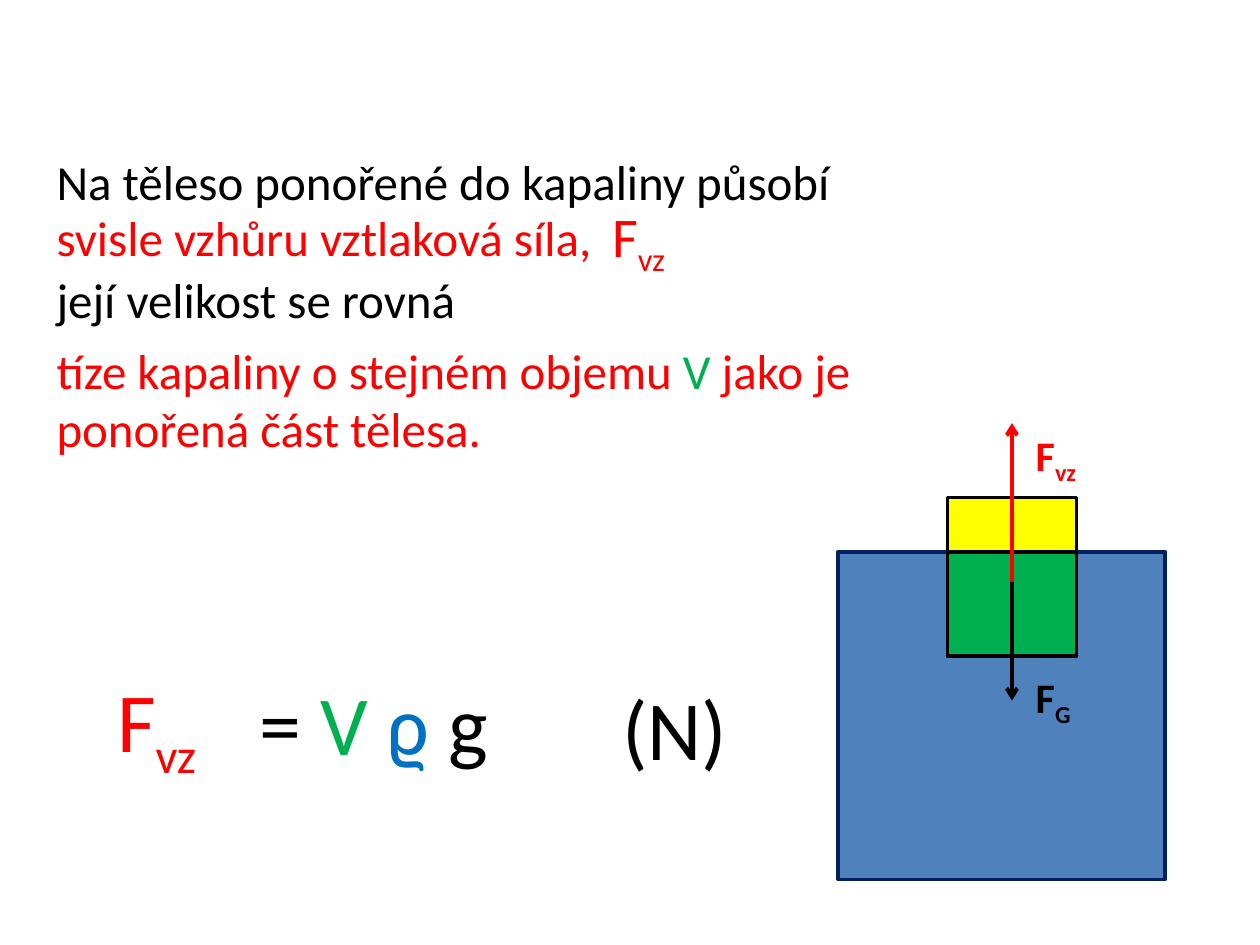
import pptx
import pptx.dml.color
import pptx.enum.shapes
import pptx.oxml
import pptx.oxml.ns
import pptx.util
from pptx.util import Cm

RGBColor = pptx.dml.color.RGBColor
BLACK = RGBColor(0x00, 0x00, 0x00)
RED = RGBColor(0xFF, 0x00, 0x00)
GREEN = RGBColor(0x00, 0xB0, 0x50)
BLUE = RGBColor(0x00, 0x70, 0xC0)
YELLOW = RGBColor(0xFF, 0xFF, 0x00)
WATER = RGBColor(0x4F, 0x81, 0xBD)
NAVY = RGBColor(0x00, 0x20, 0x60)
FONT = "Calibri"


def format_run(run, size, color, bold=False):
    run.font.name = FONT
    run.font.size = pptx.util.Pt(size)
    run.font.color.rgb = color
    run.font.bold = bold


def add_text(slide, left, top, width, height, parts, size, wrap=False):
    """Add one paragraph made of (text, colour) parts and return its frame."""
    frame = slide.shapes.add_textbox(left, top, width, height).text_frame
    frame.word_wrap = wrap
    for text, color in parts:
        run = frame.paragraphs[0].add_run()
        run.text = text
        format_run(run, size, color)
    return frame


def add_force_symbol(slide, left, top, width, height, index, size, color, bold=False):
    """Add the letter F with a subscript."""
    frame = add_text(slide, left, top, width, height,
                     [("F", color), (index, color)], size)
    letter, subscript = frame.paragraphs[0].runs
    letter.font.bold = subscript.font.bold = bold
    subscript.font._element.set("baseline", "-25000")


def add_block(slide, left, top, width, height, fill, outline):
    block = slide.shapes.add_shape(
        pptx.enum.shapes.MSO_SHAPE.RECTANGLE, left, top, width, height)
    block.shadow.inherit = False
    block.fill.solid()
    block.fill.fore_color.rgb = fill
    block.line.color.rgb = outline
    block.line.width = pptx.util.Pt(2)


def add_force_arrow(slide, x, start, end, color):
    arrow = slide.shapes.add_connector(
        pptx.enum.shapes.MSO_CONNECTOR.STRAIGHT, x, start, x, end)
    arrow.line.color.rgb = color
    arrow.line.width = pptx.util.Pt(2.25)
    namespace = pptx.oxml.ns.nsdecls("a")
    arrow.line._get_or_add_ln().append(
        pptx.oxml.parse_xml(f'<a:tailEnd {namespace} type="arrow"/>'))
    arrow._element.spPr.append(pptx.oxml.parse_xml(f"<a:effectLst {namespace}/>"))


def add_law(slide, left, top, width):
    """Place the wording of the law."""
    size = 28
    opening = add_text(slide, left, top, width, Cm(3.84),
                       [("Na těleso ponořené do kapaliny působí", BLACK)],
                       size, wrap=True)
    magnitude = opening.add_paragraph()
    magnitude.text = "její velikost se rovná"
    magnitude.space_before = pptx.util.Pt(34)
    format_run(magnitude.runs[0], size, BLACK)

    add_text(slide, left, top + Cm(1.14), Cm(11.4), Cm(1.45),
             [("svisle vzhůru vztlaková síla,", RED)], size)
    add_force_symbol(slide, left + Cm(11.2), top + Cm(1.02), Cm(1.68), Cm(3),
                     "vz", 32, RED)
    add_text(slide, left, top + Cm(3.81), Cm(17), Cm(3.84),
             [("tíze kapaliny o stejném objemu ", RED), ("V", GREEN),
              (" jako je ponořená část tělesa.", RED)], size, wrap=True)


def add_formula(slide, left, top):
    size = 48
    add_force_symbol(slide, left, top, Cm(3.2), Cm(4.37), "vz", size, RED)
    add_text(slide, left + Cm(2.87), top + Cm(0.05), Cm(5.18), Cm(2.31),
             [("= ", BLACK), ("V ", GREEN), ("ϱ", BLUE), (" g", BLACK)], size)
    add_text(slide, left + Cm(10.18), top + Cm(0.15), Cm(2.64), Cm(2.31),
             [("(N)", BLACK)], size)


def add_floating_body(slide, left, top, width):
    """Place the square of water, the floating body and the two forces."""
    surface = top + Cm(2.6)
    body_left, body_top = left + Cm(2.21), top + Cm(1.5)
    body_width, body_height = Cm(2.6), Cm(3.2)
    submerged = body_top + body_height - surface

    add_block(slide, left, surface, width, width, WATER, NAVY)
    add_block(slide, body_left, body_top, body_width, body_height, YELLOW, BLACK)
    add_block(slide, body_left, surface, body_width, submerged, GREEN, BLACK)

    axis = body_left + body_width // 2
    origin = top + Cm(3.2)
    add_force_arrow(slide, axis, origin, top + Cm(5.59), BLACK)
    add_force_arrow(slide, axis, origin, top, RED)
    label_left = axis + Cm(0.23)
    add_force_symbol(slide, label_left, top, Cm(1.88), Cm(2.31),
                     "vz", 24, RED, bold=True)
    add_force_symbol(slide, label_left, top + Cm(4.88), Cm(1.27), Cm(2.31),
                     "G", 24, BLACK, bold=True)


def main():
    presentation = pptx.Presentation()
    presentation.slide_width = Cm(25.4)
    presentation.slide_height = Cm(19.05)
    blank_layout = presentation.slide_layouts[6]
    slide = presentation.slides.add_slide(blank_layout)
    add_law(slide, Cm(0.89), Cm(2.92), Cm(22.6))
    add_floating_body(slide, Cm(16.89), Cm(8.53), Cm(6.6))
    add_formula(slide, Cm(2.11), Cm(13.36))
    presentation.save("out.pptx")


if __name__ == "__main__":
    main()
